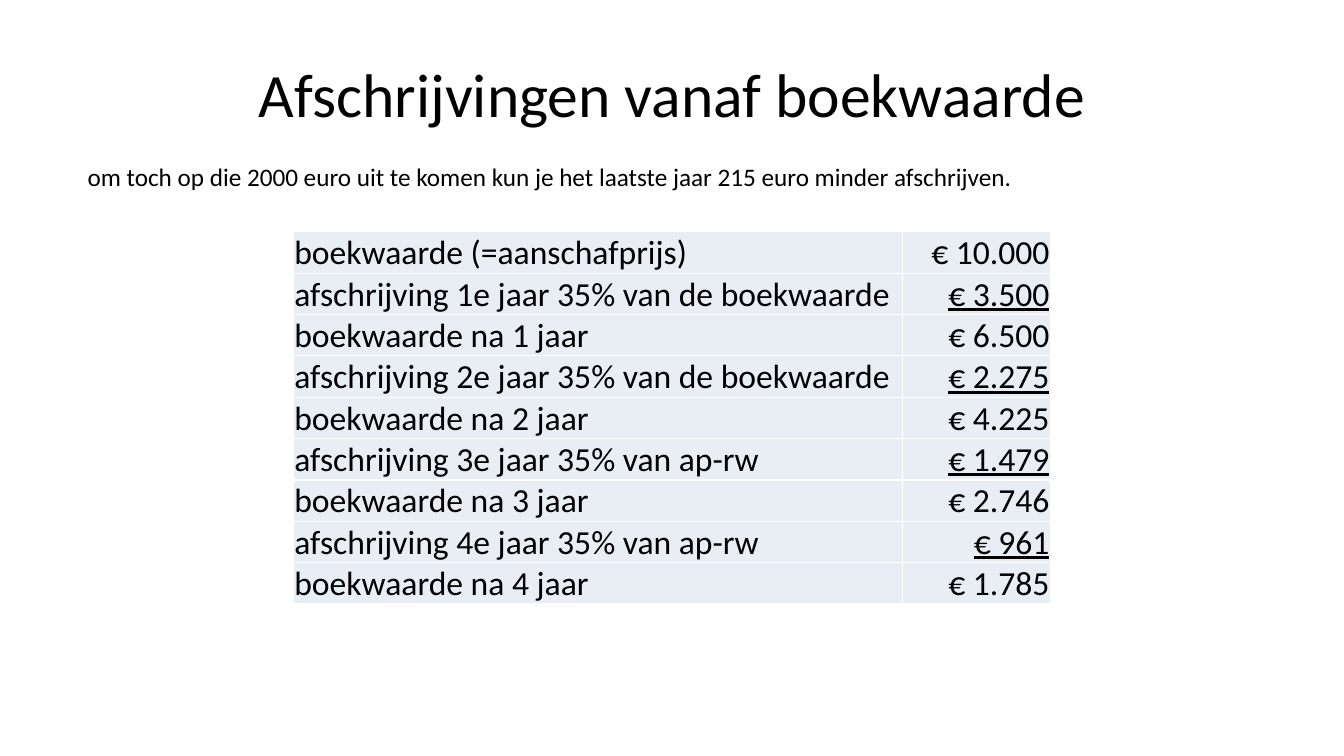
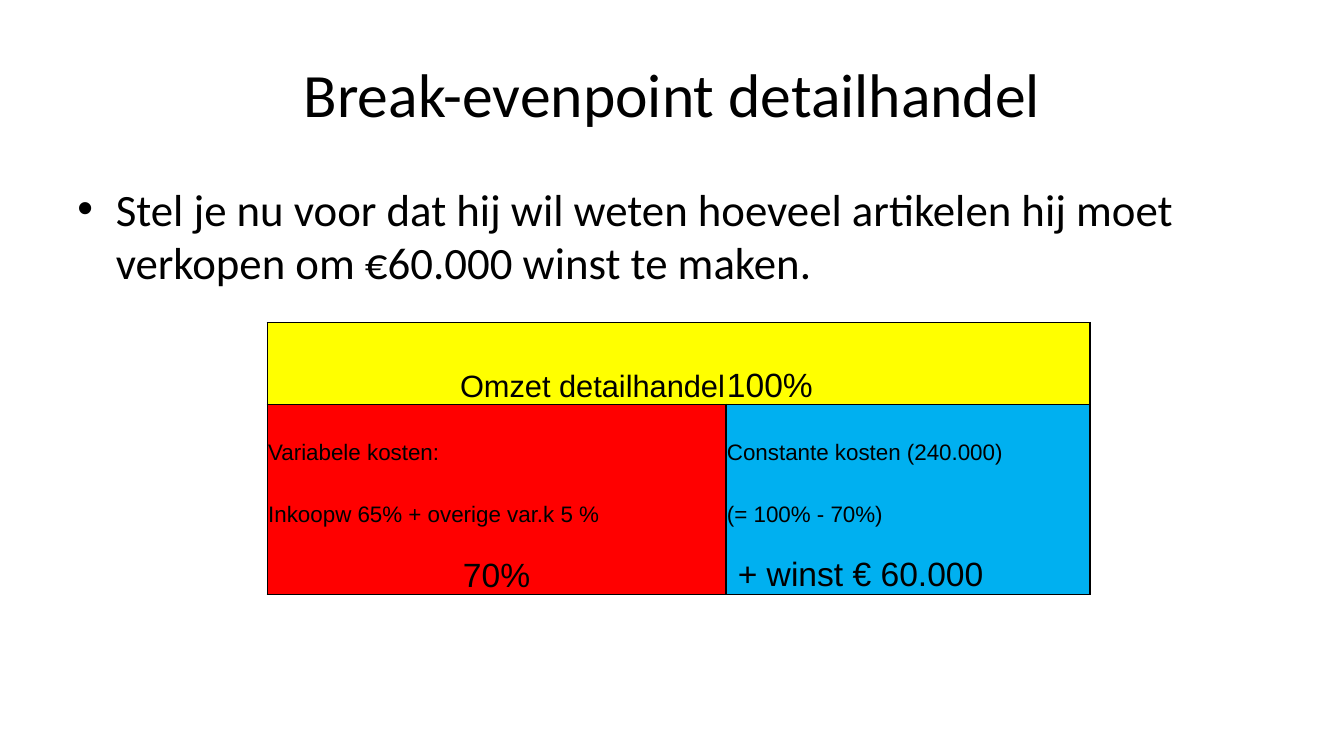
from lxml.etree import SubElement, fromstring
from pptx import Presentation
from pptx.dml.color import RGBColor
from pptx.enum.text import MSO_ANCHOR as Anchor, PP_ALIGN as Align
from pptx.oxml.ns import nsdecls, qn
from pptx.util import Inches, Pt

COLORS = {
    "text": "000000",
    "line": "000000",
    "grid": "FFFFFF",
    "cell": "E9EDF4",
    "revenue": "FFFF00",
    "variable": "FF0000",
    "constant": "00B0F0",
}
HEADING, FIGURES = "Calibri", "Arial"
SIDES = ("L", "R", "T", "B")

BOOK_VALUES = [
    ("boekwaarde (=aanschafprijs)", "€ 10.000"),
    ("afschrijving 1e jaar 35% van de boekwaarde", "€ 3.500"),
    ("boekwaarde na 1 jaar", "€ 6.500"),
    ("afschrijving 2e jaar 35% van de boekwaarde", "€ 2.275"),
    ("boekwaarde na 2 jaar", "€ 4.225"),
    ("afschrijving 3e jaar 35% van ap-rw", "€ 1.479"),
    ("boekwaarde na 3 jaar", "€ 2.746"),
    ("afschrijving 4e jaar 35% van ap-rw", "€ 961"),
    ("boekwaarde na 4 jaar", "€ 1.785"),
]

COST_ROWS = [
    (0.81, [("Omzet detailhandel", 22)], Align.RIGHT, [("100%", 24)]),
    (0.61, [("Variabele kosten:", 16)], Align.LEFT,
     [("Constante kosten (240.000)", 16)]),
    (0.61, [("Inkoopw 65% + overige var.k 5 %", 16)], Align.LEFT,
     [("(= 100% - 70%)", 16)]),
    (0.67, [("70%", 24)], Align.CENTER, [(" ", 28), ("+ winst € 60.000", 24)]),
]


def add_span(para, text, size, font=HEADING, underline=None):
    """Append one formatted run to a paragraph."""
    span = para.add_run()
    span.text = text
    span.font.name = font
    span.font.size = Pt(size)
    span.font.color.rgb = RGBColor.from_string(COLORS["text"])
    span.font.underline = underline


def add_text(page, box, text, size, align=Align.LEFT, anchor=Anchor.TOP, bullet=False):
    """Place one paragraph in a wrapping text box."""
    frame = page.shapes.add_textbox(*map(Inches, box)).text_frame
    frame.word_wrap = True
    frame.vertical_anchor = anchor
    para = frame.paragraphs[0]
    para.alignment = align
    if bullet:
        props = para._p.get_or_add_pPr()
        props.set("marL", str(Inches(0.38)))
        props.set("indent", str(-Inches(0.38)))
        SubElement(props, qn("a:buFont")).set("typeface", "Arial")
        SubElement(props, qn("a:buChar")).set("char", "•")
    add_span(para, text, size)


def add_page(deck, title):
    """Add a blank page with the shared title."""
    page = deck.slides.add_slide(deck.slide_layouts[6])
    add_text(page, (0.67, 0.3, 12, 1.25), title, 44, Align.CENTER, Anchor.MIDDLE)
    return page


def add_grid(page, left, top, widths, heights):
    """Add a plain table with the given column widths and row heights."""
    frame = page.shapes.add_table(
        len(heights), len(widths), Inches(left), Inches(top),
        Inches(sum(widths)), Inches(sum(heights)))
    table = frame.table
    table.first_row = table.horz_banding = False
    for column, width in zip(table.columns, widths):
        column.width = Inches(width)
    for row, height in zip(table.rows, heights):
        row.height = Inches(height)
    return table


def style_cell(cell, fill, border, sides, align):
    """Fill and border a cell and return its paragraph."""
    cell.margin_left = cell.margin_right = cell.margin_top = Inches(0.01)
    cell.margin_bottom = 0
    cell.vertical_anchor = Anchor.BOTTOM
    cell.fill.solid()
    cell.fill.fore_color.rgb = RGBColor.from_string(COLORS[fill])
    solid = f'<a:solidFill><a:srgbClr val="{COLORS[border]}"/></a:solidFill>'
    props = cell._tc.get_or_add_tcPr()
    for index, side in enumerate(SIDES):
        paint = solid if side in sides else "<a:noFill/>"
        props.insert(index, fromstring(
            f'<a:ln{side} {nsdecls("a")} w="{Pt(1)}">{paint}</a:ln{side}>'))
    para = cell.text_frame.paragraphs[0]
    para.alignment = align
    return para


def add_book_values(page, left, top):
    """Add the table of book values, with the deductions underlined."""
    table = add_grid(page, left, top, (6.04, 1.47), [0.41] * len(BOOK_VALUES))
    for row, (label, amount) in enumerate(BOOK_VALUES):
        underline = True if label.startswith("afschrijving") else None
        label_para = style_cell(table.cell(row, 0), "cell", "grid", SIDES, Align.LEFT)
        add_span(label_para, label, 24)
        amount_para = style_cell(table.cell(row, 1), "cell", "grid", SIDES, Align.RIGHT)
        add_span(amount_para, amount, 24, underline=underline)


def add_cost_blocks(page, left, top):
    """Add the revenue band above the variable and constant cost blocks."""
    table = add_grid(page, left, top, (4.55, 3.61), [row[0] for row in COST_ROWS])
    last = len(COST_ROWS) - 1
    for row, (_, label, align, value) in enumerate(COST_ROWS):
        fills = ("variable", "constant") if row else ("revenue", "revenue")
        across = ("T" if row < 2 else "") + ("B" if row in (0, last) else "")
        columns = zip(fills, ("L", "R"), (align, Align.LEFT), (label, value))
        for column, (fill, outer, side_align, spans) in enumerate(columns):
            sides = across + ("LR" if row else outer)
            para = style_cell(table.cell(row, column), fill, "line", sides, side_align)
            for text, size in spans:
                add_span(para, text, size, FIGURES)


def build_depreciation(deck):
    """Build the page on depreciation from book value."""
    page = add_page(deck, "Afschrijvingen vanaf boekwaarde")
    add_book_values(page, 2.91, 2.3)
    add_text(page, (0.77, 1.55, 9.56, 0.4),
             "om toch op die 2000 euro uit te komen kun je het laatste jaar "
             "215 euro minder afschrijven.", 18)


def build_break_even(deck):
    """Build the page on the retail break-even point."""
    page = add_page(deck, "Break-evenpoint detailhandel")
    add_text(page, (0.67, 1.75, 12, 4.95),
             "Stel je nu voor dat hij wil weten hoeveel artikelen hij moet "
             "verkopen om €60.000 winst te maken.", 32, bullet=True)
    add_cost_blocks(page, 2.65, 3.2)


def main():
    """Build and save the deck."""
    deck = Presentation()
    deck.slide_width, deck.slide_height = Inches(13.33), Inches(7.5)
    build_depreciation(deck)
    build_break_even(deck)
    deck.save("out.pptx")


if __name__ == "__main__":
    main()
